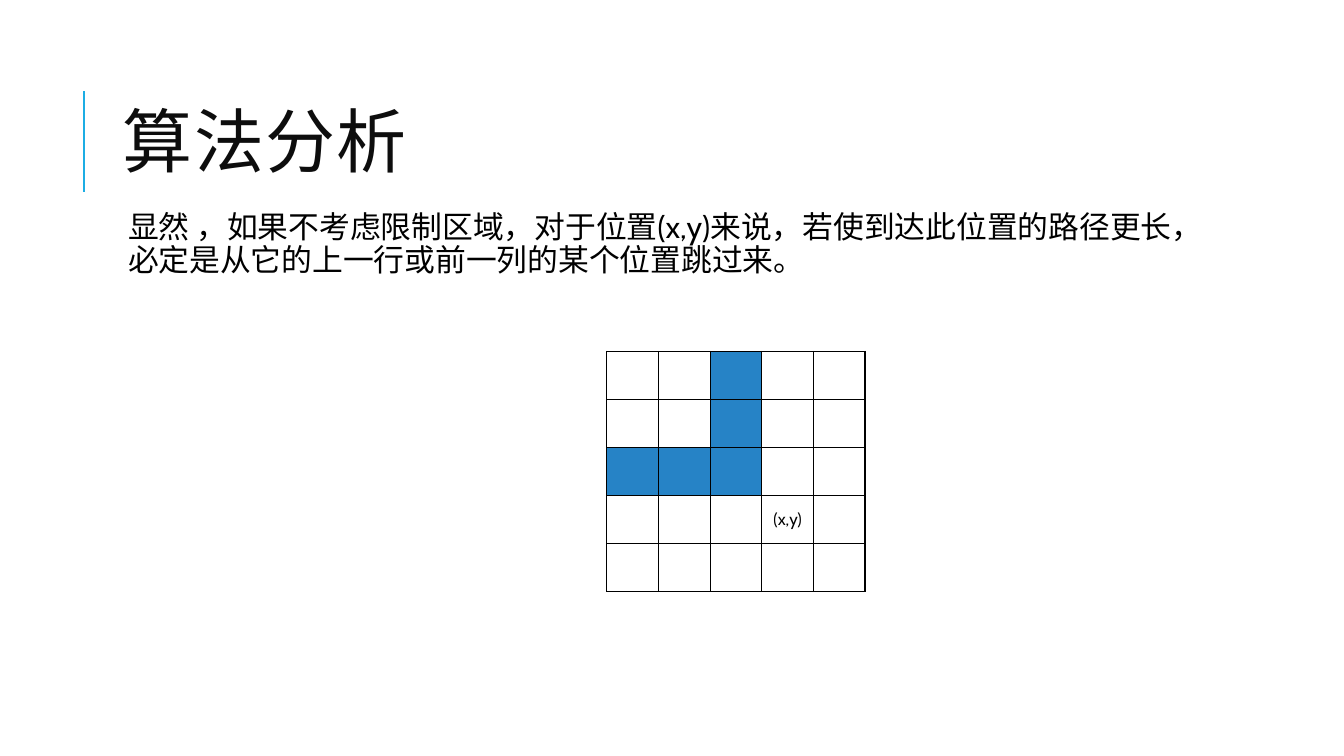
from dataclasses import dataclass

from lxml.etree import SubElement
from pptx import Presentation
from pptx.dml.color import RGBColor
from pptx.enum.shapes import MSO_CONNECTOR
from pptx.enum.text import MSO_ANCHOR, MSO_AUTO_SIZE, PP_ALIGN
from pptx.oxml.ns import qn
from pptx.util import Pt


@dataclass(frozen=True)
class Theme:
    accent: str = "1CADE4"
    blocked: str = "2683C6"
    title_ink: str = "0D0D0D"
    ink: str = "000000"
    title_font: str = "Calibri"
    body_font: str = "Cabin"
    title_size: int = 50
    body_size: int = 22
    label_size: int = 12


THEME = Theme()
GRID_SIZE = 5
BLOCKED_CELLS = {(0, 2), (1, 2), (2, 0), (2, 1), (2, 2)}
TARGET_CELL = (3, 3)


def rgb(code):
    return RGBColor.from_string(code)


def place(part, box):
    part.left, part.top, part.width, part.height = map(Pt, box)


def style_font(paragraph, name, size, color):
    font = paragraph.font
    font.name, font.size = name, Pt(size)
    font.color.rgb = rgb(color)


def add_accent_rule(slide, x, top, height):
    rule = slide.shapes.add_connector(
        MSO_CONNECTOR.STRAIGHT, Pt(x), Pt(top + height), Pt(x), Pt(top))
    rule.line.color.rgb = rgb(THEME.accent)
    rule.line.width = Pt(1.5)
    SubElement(rule._element.spPr, qn("a:effectLst"))


def fill_title(slide, text, box):
    title = slide.shapes.title
    place(title, box)
    frame = title.text_frame
    frame.text = text
    frame.vertical_anchor = MSO_ANCHOR.MIDDLE
    frame.auto_size = MSO_AUTO_SIZE.NONE
    heading = frame.paragraphs[0]
    heading.alignment = PP_ALIGN.LEFT
    heading.line_spacing = 0.8
    style_font(heading, THEME.title_font, THEME.title_size, THEME.title_ink)
    heading.runs[0].font._element.set("spc", "100")


def fill_body(slide, text, box):
    body = slide.placeholders[1]
    place(body, box)
    frame = body.text_frame
    frame.text = text
    frame.auto_size = MSO_AUTO_SIZE.NONE
    frame.margin_left = frame.margin_right = Pt(3.6)
    frame.margin_top = frame.margin_bottom = Pt(3.6)
    claim = frame.paragraphs[0]
    properties = claim._p.get_or_add_pPr()
    properties.set("marL", str(Pt(7.2)))
    properties.set("indent", str(-Pt(7.2)))
    bullet_color = SubElement(properties, qn("a:buClr"))
    SubElement(bullet_color, qn("a:srgbClr"), val=THEME.accent)
    SubElement(properties, qn("a:buChar"), char=" ")
    claim.line_spacing = 0.9
    claim.space_before, claim.space_after = Pt(0), Pt(2)
    style_font(claim, THEME.body_font, THEME.body_size, THEME.ink)


def outline_cell(cell):
    properties = cell._tc.get_or_add_tcPr()
    for side in ("lnL", "lnR", "lnT", "lnB"):
        border = SubElement(properties, qn(f"a:{side}"), w=str(Pt(1)))
        fill = SubElement(border, qn("a:solidFill"))
        SubElement(fill, qn("a:srgbClr"), val=THEME.ink)


def add_position_grid(slide, box):
    """Draw the board with its restricted cells and the target position."""
    left, top, width, height = box
    grid = slide.shapes.add_table(GRID_SIZE, GRID_SIZE, *map(Pt, box)).table
    grid.first_row = grid.horz_banding = False
    for index in range(GRID_SIZE):
        grid.columns[index].width = Pt(width / GRID_SIZE)
        grid.rows[index].height = Pt(height / GRID_SIZE)
        for column in range(GRID_SIZE):
            position = (index, column)
            cell = grid.cell(*position)
            outline_cell(cell)
            if position in BLOCKED_CELLS:
                cell.fill.solid()
                cell.fill.fore_color.rgb = rgb(THEME.blocked)
            else:
                cell.fill.background()
            cell.margin_left = cell.margin_right = Pt(3.6)
            cell.vertical_anchor = MSO_ANCHOR.MIDDLE
            if position == TARGET_CELL:
                cell.text = "(x,y)"
            label = cell.text_frame.paragraphs[0]
            label.alignment = PP_ALIGN.CENTER
            style_font(label, THEME.body_font, THEME.label_size, THEME.ink)


def build_analysis_slide(deck):
    slide = deck.slides.add_slide(deck.slide_layouts[1])
    add_accent_rule(slide, 60, 65, 72)
    fill_title(slide, "算法分析", (80.64, 46, 765.5, 118))
    fill_body(
        slide,
        "显然 ，如果不考虑限制区域，对于位置(x,y)来说，若使到达此位置的路径更长，"
        "必定是从它的上一行或前一列的某个位置跳过来。",
        (80.64, 147.6, 765.5, 317))
    add_position_grid(slide, (433.5, 251, 184.5, 171.5))


def main():
    deck = Presentation()
    deck.slide_width, deck.slide_height = Pt(960), Pt(540)
    build_analysis_slide(deck)
    deck.save("out.pptx")


if __name__ == "__main__":
    main()
